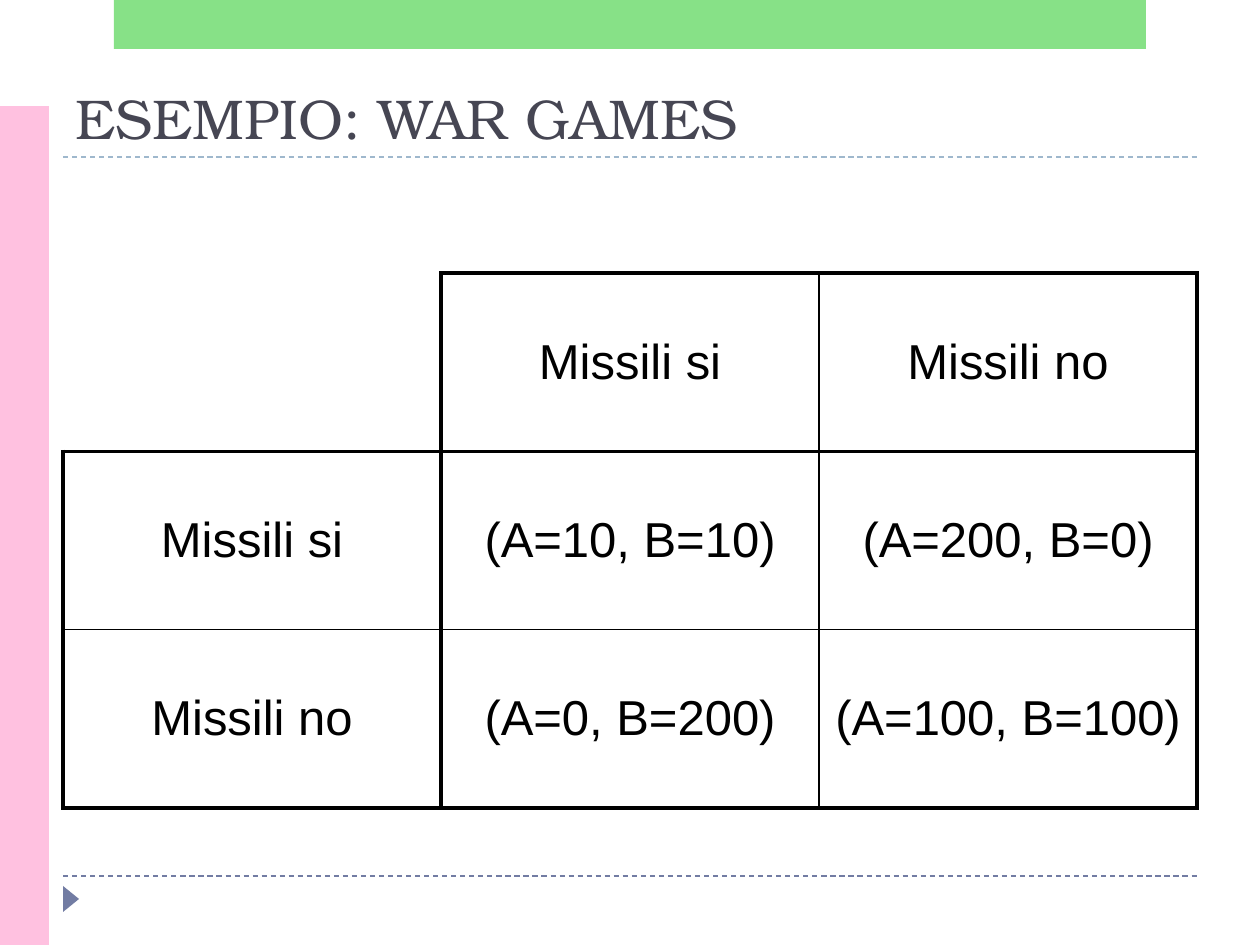
from pptx import Presentation
from pptx.dml.color import RGBColor
from pptx.enum.dml import MSO_LINE
from pptx.enum.shapes import MSO_CONNECTOR, MSO_SHAPE
from pptx.enum.text import MSO_ANCHOR, PP_ALIGN
from pptx.oxml.ns import qn
from pptx.util import Pt
from lxml import etree

PX = 914400 / 126
RECT, TRI = MSO_SHAPE.RECTANGLE, MSO_SHAPE.ISOSCELES_TRIANGLE
LINE, DASH = MSO_CONNECTOR.STRAIGHT, MSO_LINE.DASH
LOW, MID = MSO_ANCHOR.BOTTOM, MSO_ANCHOR.MIDDLE
LEFT, CENTER = PP_ALIGN.LEFT, PP_ALIGN.CENTER

TITLE = {"name": "TeX Gyre Bonum", "size": Pt(32)}
CELL = {"name": "Arial", "size": Pt(28)}
ROWS = [
    ["", "Missili si", "Missili no"],
    ["Missili si", "(A=10, B=10)", "(A=200, B=0)"],
    ["Missili no", "(A=0, B=200)", "(A=100, B=100)"],
]


def px(*vals):
    return [round(v * PX) for v in vals]


def paint(target, hue):
    target.rgb = RGBColor.from_string(hue)


def write(frame, text, style, hue, align):
    para = frame.paragraphs[0]
    para.alignment = align
    run = para.add_run()
    run.text = text
    for key, val in style.items():
        setattr(run.font, key, val)
    paint(run.font.color, hue)


def add_block(slide, kind, box, hue, turn=0, alpha=None):
    block = slide.shapes.add_shape(kind, *px(*box))
    block.shadow.inherit = False
    block.rotation = turn
    block.fill.solid()
    paint(block.fill.fore_color, hue)
    block.line.fill.background()
    if alpha:
        tone = block.fill._xPr.find(qn("a:solidFill"))[0]
        etree.SubElement(tone, qn("a:alpha"), val=str(alpha * 1000))


def add_rule(slide, left, top, width, hue):
    rule = slide.shapes.add_connector(LINE, *px(left, top, left + width, top))
    paint(rule.line.color, hue)
    rule.line.width = Pt(0.75)
    rule.line.dash_style = DASH
    etree.SubElement(rule._element.spPr, qn("a:effectLst"))


def add_frame(slide, left, width):
    # Dashed rules, page marker and coloured bars
    add_rule(slide, left, 876, width, "727CA3")
    add_rule(slide, left, 157, width, "9FB8CD")
    add_block(slide, TRI, (left - 5, 891, 26, 16), "727CA3", turn=90)
    add_block(slide, RECT, (0, 106, 49, 839), "FFC1E0")
    add_block(slide, RECT, (114, 0, 1032, 49), "62D862", alpha=76)


def add_title(slide, box, text):
    frame = slide.shapes.add_textbox(*px(*box)).text_frame
    frame.word_wrap = True
    frame.vertical_anchor = LOW
    write(frame, text, TITLE, "464653", LEFT)


def add_edge(cell, side, width):
    props = cell._tc.get_or_add_tcPr()
    edge = etree.SubElement(props, qn(f"a:ln{side}"), w=str(Pt(width)))
    if width:
        fill = etree.SubElement(edge, qn("a:solidFill"))
        etree.SubElement(fill, qn("a:srgbClr"), val="000000")
    else:
        etree.SubElement(edge, qn("a:noFill"))


def add_grid(slide, box, rows):
    count = len(rows)
    grid = slide.shapes.add_table(count, count, *px(*box)).table
    grid.first_row = grid.horz_banding = False
    # Edges are thick, save the one between the two choices
    widths = [2.25, 2.25, 1, 2.25]
    for r, row in enumerate(rows):
        for c, text in enumerate(row):
            cell = grid.cell(r, c)
            cell.vertical_anchor = MID
            ends = {"L": widths[c], "R": widths[c + 1],
                    "T": widths[r], "B": widths[r + 1]}
            if not text:
                ends.update(L=0, T=0)
            for side, width in ends.items():
                add_edge(cell, side, width)
            cell.fill.background()
            if text:
                write(cell.text_frame, text, CELL, "000000", CENTER)


def main():
    deck = Presentation()
    deck.slide_width, deck.slide_height = px(1260, 945)
    slide = deck.slides.add_slide(deck.slide_layouts[6])
    left, width = 63, 1134
    add_frame(slide, left, width)
    add_title(slide, (left, 69, width, 88), "ESEMPIO: WAR GAMES")
    add_grid(slide, (left, 273, width, 535), ROWS)
    deck.save("out.pptx")


if __name__ == "__main__":
    main()
